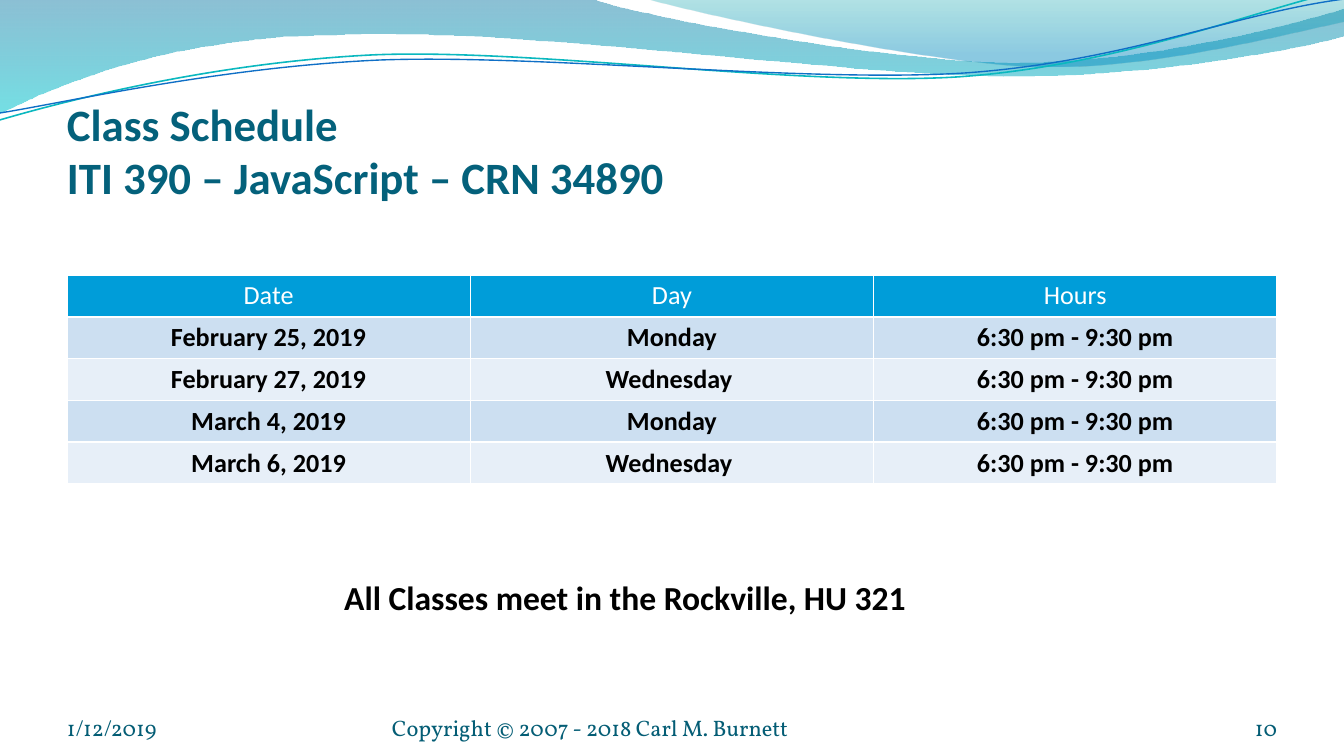
from copy import deepcopy
from math import cos, radians, sin
from lxml.etree import SubElement as Sub
from pptx import Presentation
from pptx.dml.color import RGBColor
from pptx.enum.text import MSO_ANCHOR as Anchor, MSO_AUTO_SIZE as Auto, PP_ALIGN as Align
from pptx.oxml.ns import qn
from pptx.util import Pt

WIDE, HIGH = 1344, 756
UNIT = 9144000 / WIDE
TILT = -2.7

# A path is a start point, then tuples of one point (line) or three (Bezier curve).
WAVES = [
    ([(0, 0), [(591, -1)],
      [(640, 17), (892, 63), (1019, 63)], [(1146, 63), (1288, 26), (1344, 9)],
      [(1345, 36)],
      [(1321, 44), (1169, 77), (1003, 77)], [(836, 75), (513, 28), (345, 35)],
      [(173, 36), (62, 83), (-1, 114)]],
     [(0, "0074A1", 45), (1, "00C6CF", 55)]),
    ([(644, -1),
      [(684, 11), (917, 62), (1034, 66)], [(1150, 70), (1292, 32), (1344, 22)],
      [(1344, 0)]],
     [(0, "00A1A9", 30), (0.8, "008BBF", 45)]),
]
LINES = [
    ([(0, 120),
      [(65, 101), (212, 63), (372, 55)], [(532, 48), (796, 87), (957, 77)],
      [(1120, 66), (1262, 8), (1341, -9)]], "0AB8BF", 0.85),
    ([(0, 113),
      [(63, 103), (220, 67), (380, 60)], [(542, 54), (802, 83), (964, 73)],
      [(1124, 62), (1236, 13), (1344, -1)]], "0F6FC6", 0.75),
]
HOURS = "6:30 pm - 9:30 pm"
ROWS = [
    ("Date", "Day", "Hours"),
    ("February 25, 2019", "Monday", HOURS),
    ("February 27, 2019", "Wednesday ", HOURS),
    ("March 4, 2019", "Monday", HOURS),
    ("March 6, 2019", "Wednesday ", HOURS),
]
FOOT = [
    ("1/12/2019", (67, 701, 313, 40), Align.LEFT),
    ("Copyright © 2007 - 2018 Carl M. Burnett", (392, 701, 493, 40), Align.LEFT),
    ("10", (1165, 701, 112, 40), Align.RIGHT),
]


def px(num):
    return round(num * UNIT)


def color(code):
    return RGBColor.from_string(code)


def turn(spot, angle, hub=(671, 58)):
    """Turn a point clockwise about the hub."""
    x, y = spot[0] - hub[0], spot[1] - hub[1]
    c, s = cos(radians(angle)), sin(radians(angle))
    return hub[0] + x * c - y * s, hub[1] + x * s + y * c


def write(frame, text, size, hue, font="Calibri", bold=False, align=Align.LEFT):
    frame.text = text
    for para in frame.paragraphs:
        para.alignment = align
        for run in para.runs:
            face = run.font
            face.name, face.size, face.bold = font, Pt(size), bold
            face.color.rgb = color(hue)
        for gap in para._p.findall(qn("a:br")):
            gap.append(deepcopy(para.runs[0]._r.rPr))


def inset(item, left, top, right, bottom):
    item.margin_left, item.margin_top = px(left), px(top)
    item.margin_right, item.margin_bottom = px(right), px(bottom)


class Deck:
    ink, foot, head = "04617B", "045D75", "009DD9"
    bands = "E7EFF8", "CCDFF1"

    def __init__(self):
        self.file = Presentation()
        self.file.slide_width, self.file.slide_height = px(WIDE), px(HIGH)
        self.slide = self.file.slides.add_slide(self.file.slide_layouts[5])
        self.shapes = self.slide.shapes

    def outline(self, path, close, tilt=0):
        """Draw the path through its end points, then bend the curved parts."""
        first, *rest = path
        parts = [[tuple(map(px, turn(spot, -tilt))) for spot in part]
                 for part in ([first], *rest)]
        pen = self.shapes.build_freeform(*parts[0][0])
        pen.add_line_segments([part[-1] for part in parts[1:]], close=close)
        shape = pen.convert_to_shape()
        shape.shadow.inherit = False
        nodes = list(shape._element.iter(qn("a:lnTo")))
        for node, part in zip(nodes, parts[1:]):
            if len(part) == 3:
                node.remove(node[0])
                node.tag = qn("a:cubicBezTo")
                for x, y in part:
                    Sub(node, qn("a:pt"), x=str(x - shape.left), y=str(y - shape.top))
        shape.rotation = tilt
        return shape

    def wave(self, path, stops):
        shape = self.outline(path, True)
        shape.line.fill.background()
        shape.fill.gradient()
        shape.fill.gradient_angle = 270
        for stop, (place, hue, _) in zip(shape.fill.gradient_stops, stops):
            stop.position = place
            stop.color.rgb = color(hue)
        tints = shape.fill._xPr.iter(qn("a:srgbClr"))
        for tint, (_, _, alpha) in zip(tints, stops):
            Sub(tint, qn("a:alpha"), val=str(alpha * 1000))

    def curve(self, path, hue, width):
        shape = self.outline(path, False, TILT)
        shape.fill.background()
        shape.line.color.rgb = color(hue)
        shape.line.width = Pt(width)

    def title(self, text, box):
        item = self.shapes.title
        item.left, item.top, item.width, item.height = map(px, box)
        frame = item.text_frame
        frame.auto_size = Auto.NONE
        frame.vertical_anchor = Anchor.BOTTOM
        inset(frame, 0, 7, 0, 0)
        write(frame, text, 24, self.ink, bold=True)

    def footer(self, text, box, align):
        frame = self.shapes.add_textbox(*map(px, box)).text_frame
        frame.word_wrap = True
        frame.vertical_anchor = Anchor.BOTTOM
        inset(frame, 0, 0, 0, 0)
        write(frame, text, 12, self.foot, font="Vollkorn", align=align)

    def note(self, text, box):
        frame = self.shapes.add_textbox(*map(px, box)).text_frame
        frame.word_wrap = False
        frame.auto_size = Auto.SHAPE_TO_FIT_TEXT
        write(frame, text, 18, "000000", bold=True)

    def table(self, rows, box):
        grid = self.shapes.add_table(len(rows), len(rows[0]), *map(px, box)).table
        for i, row in enumerate(rows):
            for j, text in enumerate(row):
                cell = grid.cell(i, j)
                inset(cell, 12, 5, 12, 5)
                cell.fill.solid()
                cell.fill.fore_color.rgb = color(self.bands[i % 2] if i else self.head)
                write(cell.text_frame, text, 14, "000000" if i else "FFFFFF",
                      bold=i > 0, align=Align.CENTER)


def main():
    deck = Deck()
    for wave in WAVES:
        deck.wave(*wave)
    for line in LINES:
        deck.curve(*line)
    deck.title("Class Schedule\vITI 390 – JavaScript – CRN 34890", (67, 78, 1210, 126))
    deck.table(ROWS, (67, 275, 1210, 207))
    for part in FOOT:
        deck.footer(*part)
    deck.note("All Classes meet in the Rockville, HU 321", (331, 570, 594, 54))
    deck.file.save("out.pptx")


if __name__ == "__main__":
    main()
